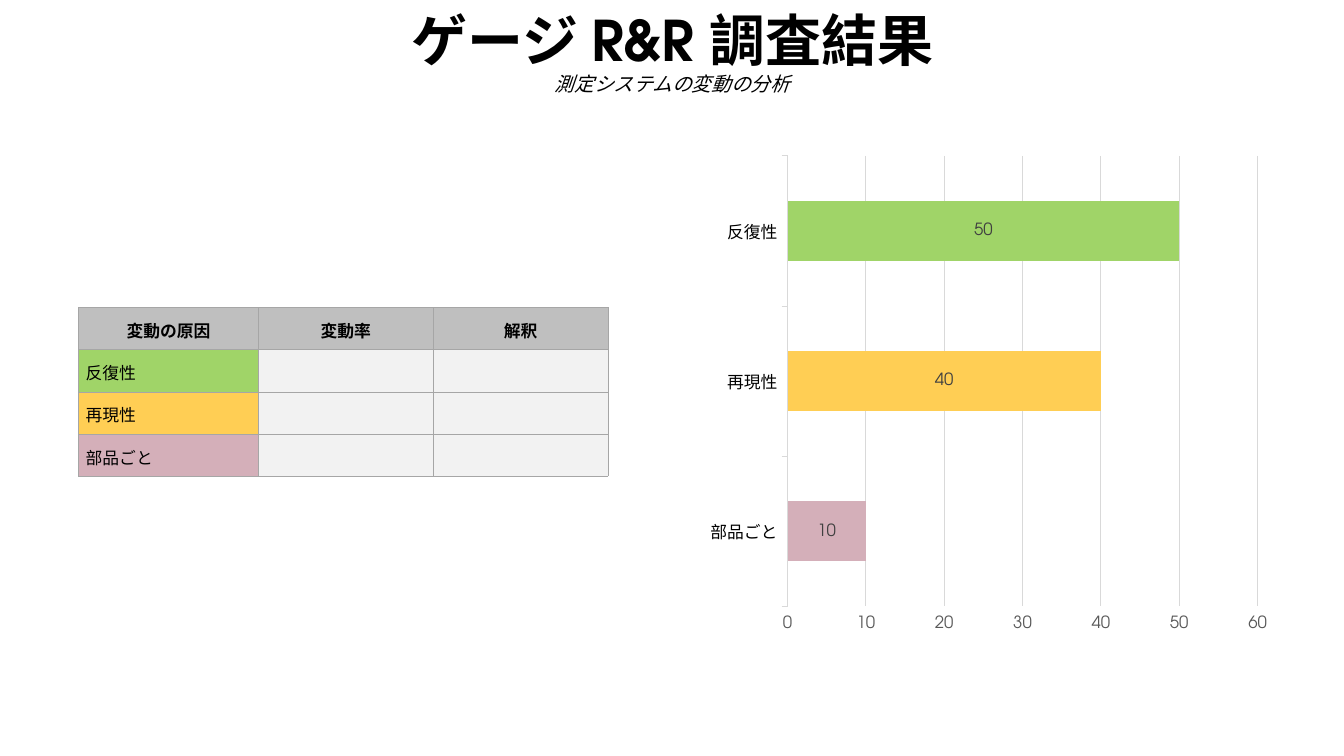
from dataclasses import dataclass

from lxml.etree import SubElement
from pptx import Presentation
from pptx.chart.data import CategoryChartData
from pptx.dml.color import RGBColor
from pptx.enum.chart import XL_CHART_TYPE, XL_LABEL_POSITION, XL_TICK_MARK
from pptx.enum.text import MSO_ANCHOR, PP_ALIGN
from pptx.oxml.ns import qn
from pptx.util import Emu, Inches, Pt

SLIDE_W, SLIDE_H = Inches(13.33), Inches(7.5)


@dataclass(frozen=True)
class Theme:
    font: str = "TeX Gyre Adventor"
    text: str = "000000"
    axis_text: str = "595959"
    label_text: str = "404040"
    grid: str = "D9D9D9"
    border: str = "A6A6A6"
    header: str = "BFBFBF"
    blank: str = "F2F2F2"
    title_size: int = 40
    subtitle_size: int = 14
    body_size: int = 12


@dataclass(frozen=True)
class Box:
    """Left, top, width and height in percent of the slide."""
    left: float
    top: float
    width: float
    height: float

    def emu(self) -> tuple[Emu, Emu, Emu, Emu]:
        return (Emu(int(SLIDE_W * self.left / 100)), Emu(int(SLIDE_H * self.top / 100)),
                Emu(int(SLIDE_W * self.width / 100)), Emu(int(SLIDE_H * self.height / 100)))


@dataclass(frozen=True)
class Source:
    """One source of measurement variation."""
    name: str
    percent: int
    color: str


THEME = Theme()
TITLE_BOX = Box(24.91, 0, 50.26, 14.4)
TABLE_BOX = Box(5.85, 40.67, 39.38, 22.3)
CHART_BOX = Box(51.99, 19.33, 43.14, 65.6)
HEADERS = ("変動の原因", "変動率", "解釈")
COLUMN_SHARES = (0.34, 0.33, 0.33)
SOURCES = (
    Source("反復性", 50, "A0D468"),
    Source("再現性", 40, "FFCE54"),
    Source("部品ごと", 10, "D4AFB9"),
)


def rgb(color: str) -> RGBColor:
    return RGBColor.from_string(color)


def set_font(font, size=THEME.body_size, color=THEME.text, bold=False, italic=False) -> None:
    font.name, font.size = THEME.font, Pt(size)
    font.bold, font.italic = bold, italic
    font.color.rgb = rgb(color)


def add_text(p, text: str, align=PP_ALIGN.LEFT, spacing=1.15, **font_format) -> None:
    p.alignment, p.line_spacing = align, spacing
    r = p.add_run()
    r.text = text
    set_font(r.font, **font_format)


def add_title(s) -> None:
    tf = s.shapes.add_textbox(*TITLE_BOX.emu()).text_frame
    tf.word_wrap = True
    tf.vertical_anchor = MSO_ANCHOR.MIDDLE
    p = tf.paragraphs[0]
    centred = dict(align=PP_ALIGN.CENTER, spacing=0.9)
    add_text(p, "ゲージ R&R 調査結果", size=THEME.title_size, bold=True, **centred)
    p.add_line_break()
    add_text(p, "測定システムの変動の分析", size=THEME.subtitle_size, italic=True, **centred)


def style_cell(cell, fill: str) -> None:
    """Draw the thin border on all four sides, then the fill."""
    tc_pr = cell._tc.get_or_add_tcPr()
    for side in ("lnL", "lnR", "lnT", "lnB"):
        ln = SubElement(tc_pr, qn(f"a:{side}"), w=str(Pt(0.25)))
        SubElement(SubElement(ln, qn("a:solidFill")), qn("a:srgbClr"), val=THEME.border)
    cell.fill.solid()
    cell.fill.fore_color.rgb = rgb(fill)
    cell.margin_left = cell.margin_right = Inches(0.07)
    cell.margin_top = cell.margin_bottom = Inches(0.07 if cell.text else 0)


def add_source_table(s) -> None:
    left, top, width, height = TABLE_BOX.emu()
    n_rows = len(SOURCES) + 1
    table = s.shapes.add_table(n_rows, len(HEADERS), left, top, width, height).table
    table.horz_banding = False
    for column, share in zip(table.columns, COLUMN_SHARES):
        column.width = int(width * share)
    for row in table.rows:
        row.height = height // n_rows
    for col, header in enumerate(HEADERS):
        cell = table.cell(0, col)
        add_text(cell.text_frame.paragraphs[0], header, align=PP_ALIGN.CENTER, bold=True)
        style_cell(cell, THEME.header)
    for row, source in enumerate(SOURCES, start=1):
        add_text(table.cell(row, 0).text_frame.paragraphs[0], source.name)
        for col in range(len(HEADERS)):
            style_cell(table.cell(row, col), THEME.blank if col else source.color)


def set_line(line) -> None:
    line.color.rgb = rgb(THEME.grid)
    line.width = Pt(0.75)


def add_variation_chart(s) -> None:
    bars = SOURCES[::-1]
    data = CategoryChartData()
    data.categories = [source.name for source in bars]
    data.add_series("Series 1", [source.percent for source in bars])
    chart = s.shapes.add_chart(XL_CHART_TYPE.BAR_STACKED, *CHART_BOX.emu(), data).chart
    chart.has_legend = chart.has_title = False
    set_font(chart.font)

    plot = chart.plots[0]
    plot.gap_width, plot.overlap, plot.vary_by_categories = 150, 100, False
    for i, source in enumerate(bars):
        fill = plot.series[0].points[i].format.fill
        fill.solid()
        fill.fore_color.rgb = rgb(source.color)
    labels = plot.series[0].data_labels
    labels.show_value = True
    labels.position = XL_LABEL_POSITION.CENTER
    set_font(labels.font, color=THEME.label_text)

    cat, val = chart.category_axis, chart.value_axis
    set_font(cat.tick_labels.font)
    set_font(val.tick_labels.font, color=THEME.axis_text)
    cat.major_tick_mark = val.major_tick_mark = XL_TICK_MARK.OUTSIDE
    set_line(cat.format.line)
    val.format.line.fill.background()
    val.has_major_gridlines = True
    set_line(val.major_gridlines.format.line)
    val.minimum_scale, val.maximum_scale, val.major_unit = 0, 60, 10


def main() -> None:
    prs = Presentation()
    prs.slide_width, prs.slide_height = SLIDE_W, SLIDE_H
    s = prs.slides.add_slide(prs.slide_layouts[6])
    add_variation_chart(s)
    add_title(s)
    add_source_table(s)
    prs.save("out.pptx")


if __name__ == "__main__":
    main()
